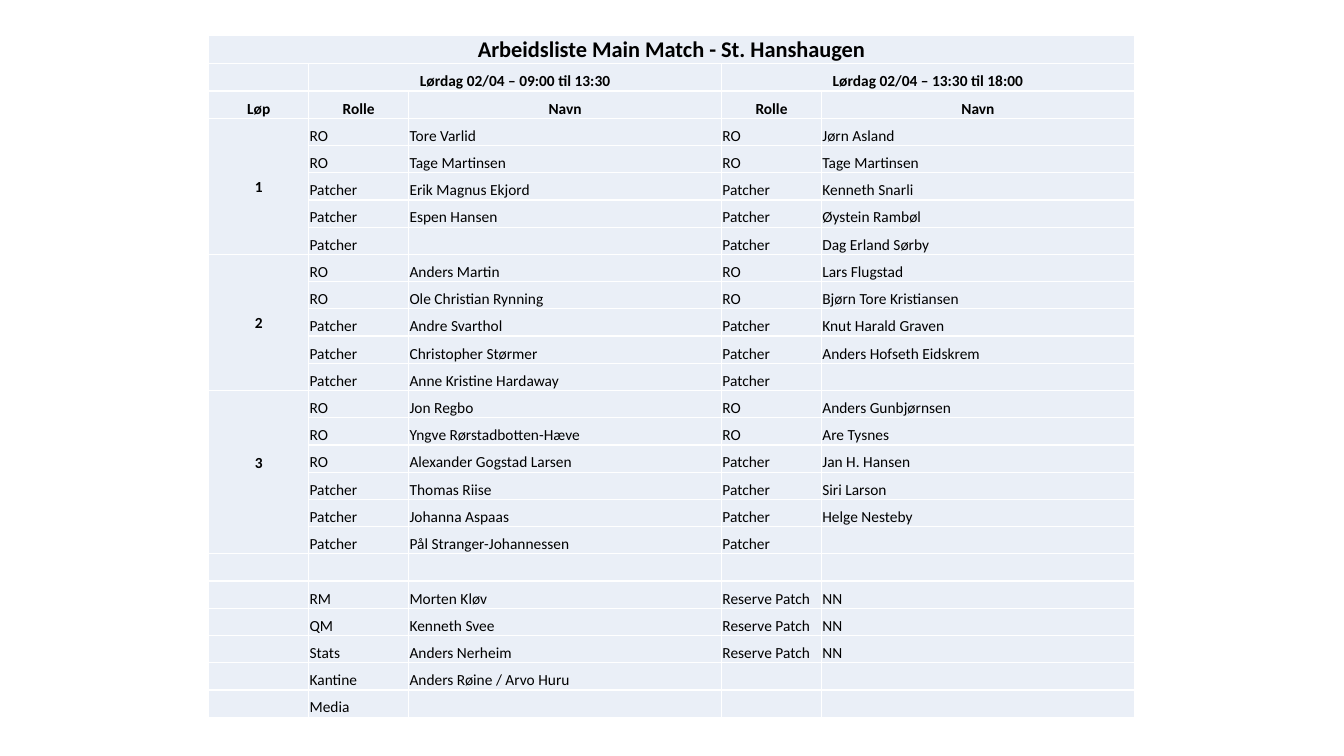
"""Build the work list slide for the main match."""
from lxml import etree
from pptx import Presentation
from pptx.dml.color import RGBColor
from pptx.enum.text import MSO_ANCHOR, PP_ALIGN
from pptx.oxml.ns import qn
from pptx.util import Pt

LEFT, CENTER = PP_ALIGN.LEFT, PP_ALIGN.CENTER
BOTTOM, MIDDLE = MSO_ANCHOR.BOTTOM, MSO_ANCHOR.MIDDLE
BLACK = RGBColor(0x00, 0x00, 0x00)
WHITE = RGBColor(0xFF, 0xFF, 0xFF)
PALE_BLUE = RGBColor(0xEA, 0xEF, 0xF7)

TITLE = "Arbeidsliste Main Match - St. Hanshaugen"
SHIFTS = {1: "Lørdag 02/04 – 09:00 til 13:30", 3: "Lørdag 02/04 – 13:30 til 18:00"}
HEADINGS = ["Løp", "Rolle", "Navn", "Rolle", "Navn"]
STAGES = {
    "1": [
        ("RO", "Tore Varlid", "RO", "Jørn Asland"),
        ("RO", "Tage Martinsen", "RO", "Tage Martinsen"),
        ("Patcher", "Erik Magnus Ekjord", "Patcher", "Kenneth Snarli"),
        ("Patcher", "Espen Hansen", "Patcher", "Øystein Rambøl"),
        ("Patcher", "", "Patcher", "Dag Erland Sørby"),
    ],
    "2": [
        ("RO", "Anders Martin", "RO", "Lars Flugstad"),
        ("RO", "Ole Christian Rynning", "RO", "Bjørn Tore Kristiansen"),
        ("Patcher", "Andre Svarthol", "Patcher", "Knut Harald Graven"),
        ("Patcher", "Christopher Størmer", "Patcher", "Anders Hofseth Eidskrem"),
        ("Patcher", "Anne Kristine Hardaway", "Patcher", ""),
    ],
    "3": [
        ("RO", "Jon Regbo", "RO", "Anders Gunbjørnsen"),
        ("RO", "Yngve Rørstadbotten-Hæve", "RO", "Are Tysnes"),
        ("RO", "Alexander Gogstad Larsen", "Patcher", "Jan H. Hansen"),
        ("Patcher", "Thomas Riise", "Patcher", "Siri Larson"),
        ("Patcher", "Johanna Aspaas", "Patcher", "Helge Nesteby"),
        ("Patcher", "Pål Stranger-Johannessen", "Patcher", ""),
    ],
}
SUPPORT = [
    ("", "", "", ""),
    ("RM", "Morten Kløv", "Reserve Patch", "NN"),
    ("QM", "Kenneth Svee", "Reserve Patch", "NN"),
    ("Stats", "Anders Nerheim", "Reserve Patch", "NN"),
    ("Kantine", "Anders Røine / Arvo Huru", "", ""),
    ("Media", "", "", ""),
]
COLUMN_WIDTHS = [71.4, 71.4, 223.5, 71.4, 223.5]
ROW_HEIGHT = 19.47


class WorkList:
    """Hold the page, its text style and its table."""

    def __init__(self, page, font="Calibri", size=11):
        self.page, self.font, self.size = page, font, size

    def add_table(self, left, top, row_count):
        """Add a pale table with white borders."""
        frame = self.page.shapes.add_table(
            row_count, len(COLUMN_WIDTHS), Pt(left), Pt(top),
            Pt(sum(COLUMN_WIDTHS)), Pt(ROW_HEIGHT * row_count))
        self.table = frame.table
        self.table.first_row = self.table.horz_banding = False
        for column, width in zip(self.table.columns, COLUMN_WIDTHS):
            column.width = Pt(width)
        for row in self.table.rows:
            row.height = Pt(ROW_HEIGHT)
            for cell in row.cells:
                self.style_cell(cell)

    def style_cell(self, cell):
        """Set borders, fill, margins and the size of an empty line."""
        properties = cell._tc.get_or_add_tcPr()
        for side in ("a:lnL", "a:lnR", "a:lnT", "a:lnB"):
            line = etree.SubElement(properties, qn(side), w=str(Pt(1)))
            solid = etree.SubElement(line, qn("a:solidFill"))
            etree.SubElement(solid, qn("a:srgbClr"), val=str(WHITE))
        cell.fill.solid()
        cell.fill.fore_color.rgb = PALE_BLUE
        cell.margin_left = cell.margin_right = cell.margin_top = Pt(0.6)
        cell.margin_bottom = Pt(0)
        para = cell.text_frame.paragraphs[0]
        etree.SubElement(para._p, qn("a:endParaRPr"), sz=str(self.size * 100))

    def add_text(self, row, column, text, *, size=None, bold=False, align=LEFT,
                 anchor=BOTTOM, rows=1, columns=1, lift=0):
        """Put text in a cell that may span rows and columns."""
        cell = self.table.cell(row, column)
        if rows > 1 or columns > 1:
            cell.merge(self.table.cell(row + rows - 1, column + columns - 1))
        cell.vertical_anchor = anchor
        cell.margin_bottom = Pt(lift)
        if not text:
            return
        para = cell.text_frame.paragraphs[0]
        para.alignment = align
        span = para.add_run()
        span.text = text
        span.font.name = self.font
        span.font.size = Pt(size or self.size)
        span.font.bold = bold
        span.font.color.rgb = BLACK

    def add_crew(self, first_row, crew):
        """Put in roles and names for both shifts."""
        for row, entries in enumerate(crew, first_row):
            for column, text in enumerate(entries, 1):
                self.add_text(row, column, text)


def main():
    """Create the deck and save it."""
    deck = Presentation()
    deck.slide_width, deck.slide_height = Pt(960), Pt(540)
    work_list = WorkList(deck.slides.add_slide(deck.slide_layouts[6]))
    row_count = 3 + sum(map(len, STAGES.values())) + len(SUPPORT)
    work_list.add_table(149.2, 25.4, row_count)
    heading = {"bold": True, "align": CENTER}

    work_list.add_text(0, 0, TITLE, size=16, columns=5, **heading)
    for column, shift in SHIFTS.items():
        work_list.add_text(1, column, shift, columns=2, **heading)
    for column, text in enumerate(HEADINGS):
        work_list.add_text(2, column, text, **heading)

    row = 3
    for stage, crew in STAGES.items():
        work_list.add_text(row, 0, stage, rows=len(crew), anchor=MIDDLE,
                           lift=13 if stage == "3" else 0, **heading)
        work_list.add_crew(row, crew)
        row += len(crew)
    work_list.add_crew(row, SUPPORT)
    deck.save("out.pptx")


if __name__ == "__main__":
    main()
